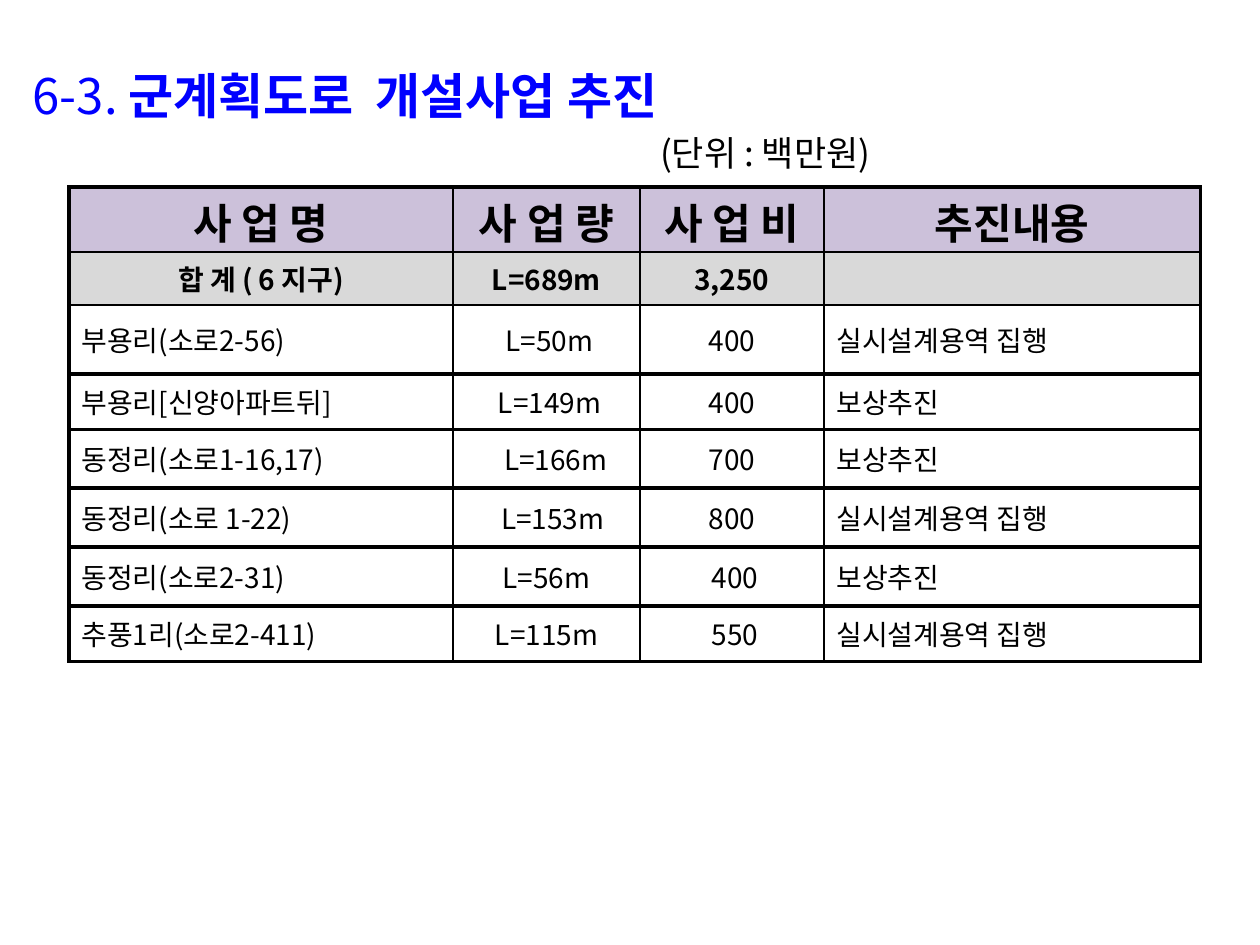
import dataclasses

import lxml.etree
import pptx
import pptx.dml.color
import pptx.enum.text
import pptx.oxml.ns
import pptx.util

Pt = pptx.util.Pt
ALIGN = pptx.enum.text.PP_ALIGN
ANCHOR = pptx.enum.text.MSO_ANCHOR
qn = pptx.oxml.ns.qn

FONT = "Noto Sans CJK KR"
COLORS = {"title": "0000FF", "ink": "000000", "header": "CCC1DA", "total": "D9D9D9"}
THIN, THICK = 1, 2.25
UNIT_INDENT = 358.5
SIDE_MARGIN = 7.2
COLUMN_WIDTHS = [219.4, 107, 105, 215.4]


@dataclasses.dataclass
class Row:
    height: float
    texts: tuple[str, str, str, str]
    fill: str | None = None
    size: float = 16
    bold: bool = False
    centered: bool = False
    margins: tuple[float, float] = (3.6, 3.6)
    line_below: float = THICK
    indents: tuple[float, float, float, float] = (0, 0, 0, 0)


ROWS = [
    Row(37, ("사 업 명", "사 업 량", "사 업 비", "추진내용"), "header", 24, True, True, (2.3, 0), THIN),
    Row(30.4, ("합 계 ( 6 지구)", "L=689m", "3,250", ""), "total", 16, True, True, line_below=THIN),
    Row(39.4, ("부용리(소로2-56)", "L=50m", "400", "실시설계용역 집행"), indents=(0, 3.5, 0, 0)),
    Row(31.6, ("부용리[신양아파트뒤]", "L=149m", "400", "보상추진"), indents=(0, 3.5, 0, 0)),
    Row(33.7, ("동정리(소로1-16,17)", "L=166m", "700", "보상추진"), indents=(0, 10.5, 0, 0)),
    Row(33.7, ("동정리(소로 1-22)", "L=153m", "800", "실시설계용역 집행"), indents=(0, 7, 0, 0)),
    Row(33.7, ("동정리(소로2-31)", "L=56m", "400", "보상추진"), indents=(0, 0, 3.5, 0)),
    Row(31.6, ("추풍1리(소로2-411)", "L=115m", "550", "실시설계용역 집행"), indents=(0, 0, 3.5, 0)),
]


def add_span(para, text: str, *, size: float, color: str = "ink", bold: bool = False) -> None:
    """Append unkerned text, with the same font for Latin and Korean."""
    span = para.add_run()
    span.text = text
    span.font.size = Pt(size)
    span.font.bold = bold
    span.font.name = FONT
    span.font.color.rgb = pptx.dml.color.RGBColor.from_string(COLORS[color])
    span.font._element.set("kern", "0")
    east_asian = lxml.etree.Element(qn("a:ea"), typeface=FONT)
    span.font._element.find(qn("a:latin")).addnext(east_asian)


def set_borders(cell, left: float, right: float, top: float, bottom: float) -> None:
    """Draw the four cell borders, which must precede the fill in the XML."""
    properties = cell._tc.get_or_add_tcPr()
    widths = {"lnL": left, "lnR": right, "lnT": top, "lnB": bottom}
    for position, (tag, width) in enumerate(widths.items()):
        line = lxml.etree.Element(qn(f"a:{tag}"), w=str(Pt(width)))
        fill = lxml.etree.SubElement(line, qn("a:solidFill"))
        lxml.etree.SubElement(fill, qn("a:srgbClr"), val=COLORS["ink"])
        properties.insert(position, line)


def add_title(page) -> None:
    box = page.shapes.title
    box.left, box.top, box.width, box.height = Pt(11.5), Pt(33.8), Pt(686), Pt(70.6)
    frame = box.text_frame
    frame.word_wrap = True
    frame.auto_size = pptx.enum.text.MSO_AUTO_SIZE.NONE
    frame.vertical_anchor = ANCHOR.TOP

    heading = frame.paragraphs[0]
    add_span(heading, "6-3. ", size=28, color="title")
    add_span(heading, "군계획도로  개설사업 추진", size=28, color="title", bold=True)

    unit = frame.add_paragraph()
    unit._p.get_or_add_pPr().set("marL", str(Pt(UNIT_INDENT)))
    add_span(unit, "(단위 : 백만원)", size=20)

    for para in frame.paragraphs:
        para.alignment = ALIGN.LEFT
        para.line_spacing = 1.0
    heading.space_before = Pt(5.6)
    unit.space_before = Pt(4)


def add_project_table(page) -> None:
    height = sum(row.height for row in ROWS)
    table = page.shapes.add_table(
        len(ROWS), len(COLUMN_WIDTHS), Pt(39.4), Pt(106.8), Pt(sum(COLUMN_WIDTHS)), Pt(height)
    ).table
    table.first_row = table.horz_banding = False
    for column, width in zip(table.columns, COLUMN_WIDTHS):
        column.width = Pt(width)

    last = len(COLUMN_WIDTHS) - 1
    line_above = THICK
    for index, row in enumerate(ROWS):
        table.rows[index].height = Pt(row.height)
        for number, (text, indent) in enumerate(zip(row.texts, row.indents)):
            cell = table.cell(index, number)
            cell.vertical_anchor = ANCHOR.MIDDLE
            cell.margin_left = Pt(SIDE_MARGIN + indent)
            cell.margin_top, cell.margin_bottom = map(Pt, row.margins)
            if row.fill:
                cell.fill.solid()
                cell.fill.fore_color.rgb = pptx.dml.color.RGBColor.from_string(COLORS[row.fill])
            else:
                cell.fill.background()
            set_borders(
                cell,
                left=THICK if number == 0 else THIN,
                right=THICK if number == last else THIN,
                top=line_above,
                bottom=row.line_below,
            )
            para = cell.text_frame.paragraphs[0]
            centered = row.centered or number in (1, 2)
            para.alignment = ALIGN.CENTER if centered else ALIGN.LEFT
            if text:
                add_span(para, text, size=row.size, bold=row.bold)
        line_above = row.line_below


def main() -> None:
    deck = pptx.Presentation()
    deck.slide_width, deck.slide_height = Pt(720), Pt(540)
    page = deck.slides.add_slide(deck.slide_layouts.get_by_name("Title Only"))
    add_title(page)
    add_project_table(page)
    deck.save("out.pptx")


if __name__ == "__main__":
    main()
